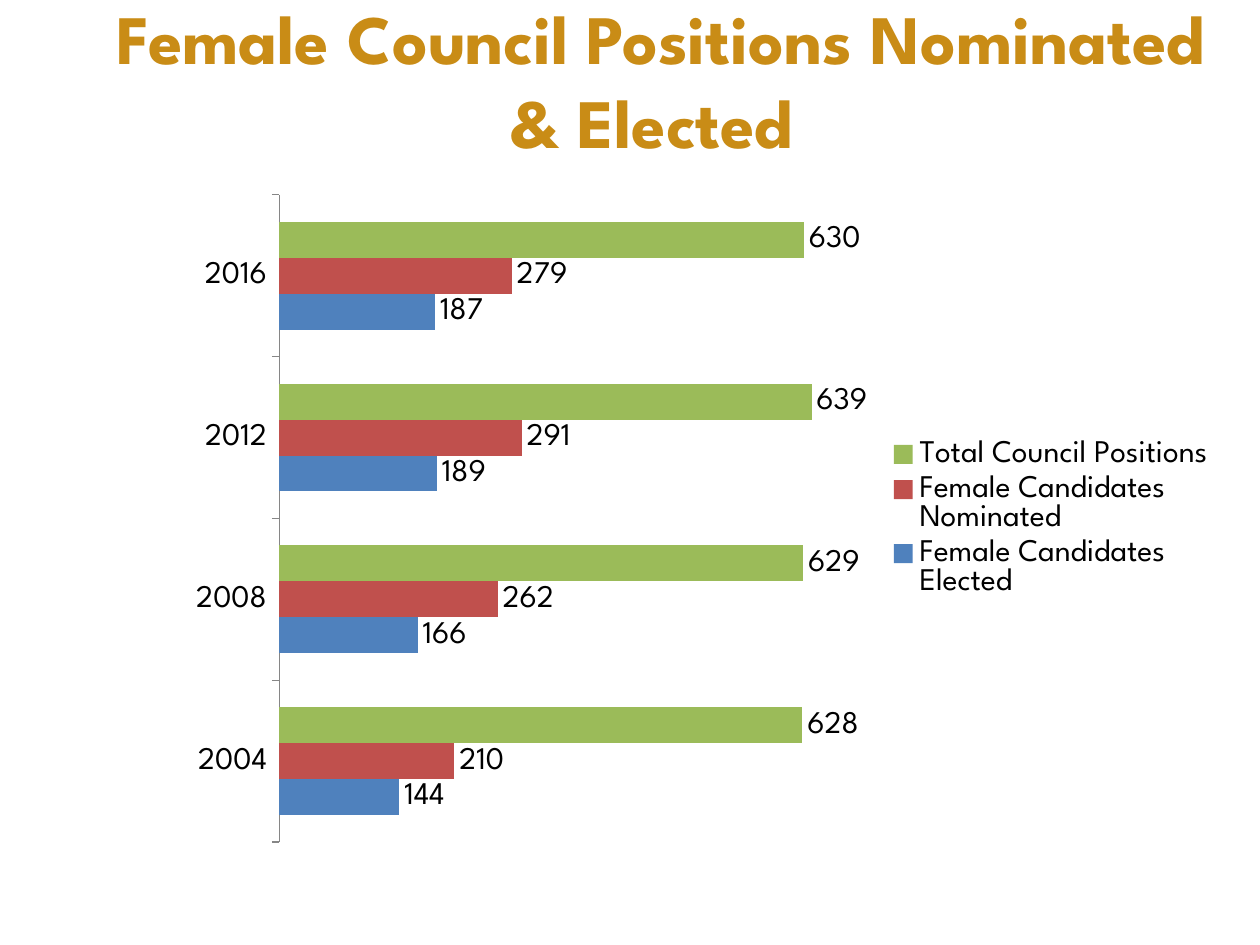
from pptx import Presentation
from pptx.chart.data import CategoryChartData
from pptx.dml.color import RGBColor
from pptx.enum.chart import (XL_CHART_TYPE, XL_LABEL_POSITION,
                             XL_LEGEND_POSITION, XL_TICK_MARK)
from pptx.enum.text import MSO_ANCHOR, PP_ALIGN
from pptx.util import Inches, Pt

BAR_CLUSTERED = XL_CHART_TYPE.BAR_CLUSTERED
OUTSIDE_END = XL_LABEL_POSITION.OUTSIDE_END
LEGEND_RIGHT = XL_LEGEND_POSITION.RIGHT
TICK_OUTSIDE = XL_TICK_MARK.OUTSIDE
MIDDLE = MSO_ANCHOR.MIDDLE
CENTER = PP_ALIGN.CENTER

GOLD = RGBColor(0xC9, 0x8C, 0x16)
BLACK = RGBColor(0x00, 0x00, 0x00)
GRAY = RGBColor(0x86, 0x86, 0x86)
BLUE = RGBColor(0x4F, 0x81, 0xBD)
RED = RGBColor(0xC0, 0x50, 0x4D)
GREEN = RGBColor(0x9B, 0xBB, 0x59)

FONT = "League Spartan"
WIDTH, HEIGHT = Inches(10), Inches(7.5)

TITLE = "Female Council Positions Nominated & Elected "
YEARS = ["2004", "2008", "2012", "2016"]
SERIES = [
    ("Female Candidates Elected", (144, 166, 189, 187), BLUE),
    ("Female Candidates Nominated", (210, 262, 291, 279), RED),
    ("Total Council Positions", (628, 629, 639, 630), GREEN),
]


def set_font(font, size, color, bold=False):
    font.name = FONT
    font.size = Pt(size)
    font.bold = bold
    font.color.rgb = color


def add_title(slide, text, left, top, width, height):
    frame = slide.shapes.add_textbox(left, top, width, height).text_frame
    frame.word_wrap = True
    frame.vertical_anchor = MIDDLE
    frame.text = text
    paragraph = frame.paragraphs[0]
    paragraph.alignment = CENTER
    set_font(paragraph.runs[0].font, 39.6, GOLD, bold=True)


def add_bar_chart(slide, left, top, width, height):
    data = CategoryChartData()
    data.categories = YEARS
    for name, values, _ in SERIES:
        data.add_series(name, values)
    chart = slide.shapes.add_chart(
        BAR_CLUSTERED, left, top, width, height, data).chart
    chart.has_title = False
    set_font(chart.font, 18, BLACK)
    chart.has_legend = True
    chart.legend.position = LEGEND_RIGHT
    chart.legend.include_in_layout = False
    style_axes(chart)
    style_bars(chart.plots[0])


def style_axes(chart):
    chart.value_axis.visible = False
    chart.value_axis.has_major_gridlines = False
    chart.value_axis.minimum_scale = 0
    chart.value_axis.maximum_scale = 700
    chart.category_axis.major_tick_mark = TICK_OUTSIDE
    chart.category_axis.format.line.color.rgb = GRAY


def style_bars(plot):
    plot.gap_width = 150
    plot.overlap = 0
    plot.vary_by_categories = False
    for series, (_, _, color) in zip(plot.series, SERIES):
        series.format.fill.solid()
        series.format.fill.fore_color.rgb = color
        series.data_labels.show_value = True
        series.data_labels.position = OUTSIDE_END


def main():
    presentation = Presentation()
    presentation.slide_width, presentation.slide_height = WIDTH, HEIGHT
    slide = presentation.slides.add_slide(presentation.slide_layouts[6])
    add_title(slide, TITLE, Inches(0.75), 0, Inches(9), Inches(1.25))
    add_bar_chart(slide, Inches(1.39), Inches(1.44),
                  Inches(8.36), Inches(5.35))
    presentation.save("out.pptx")


if __name__ == "__main__":
    main()
